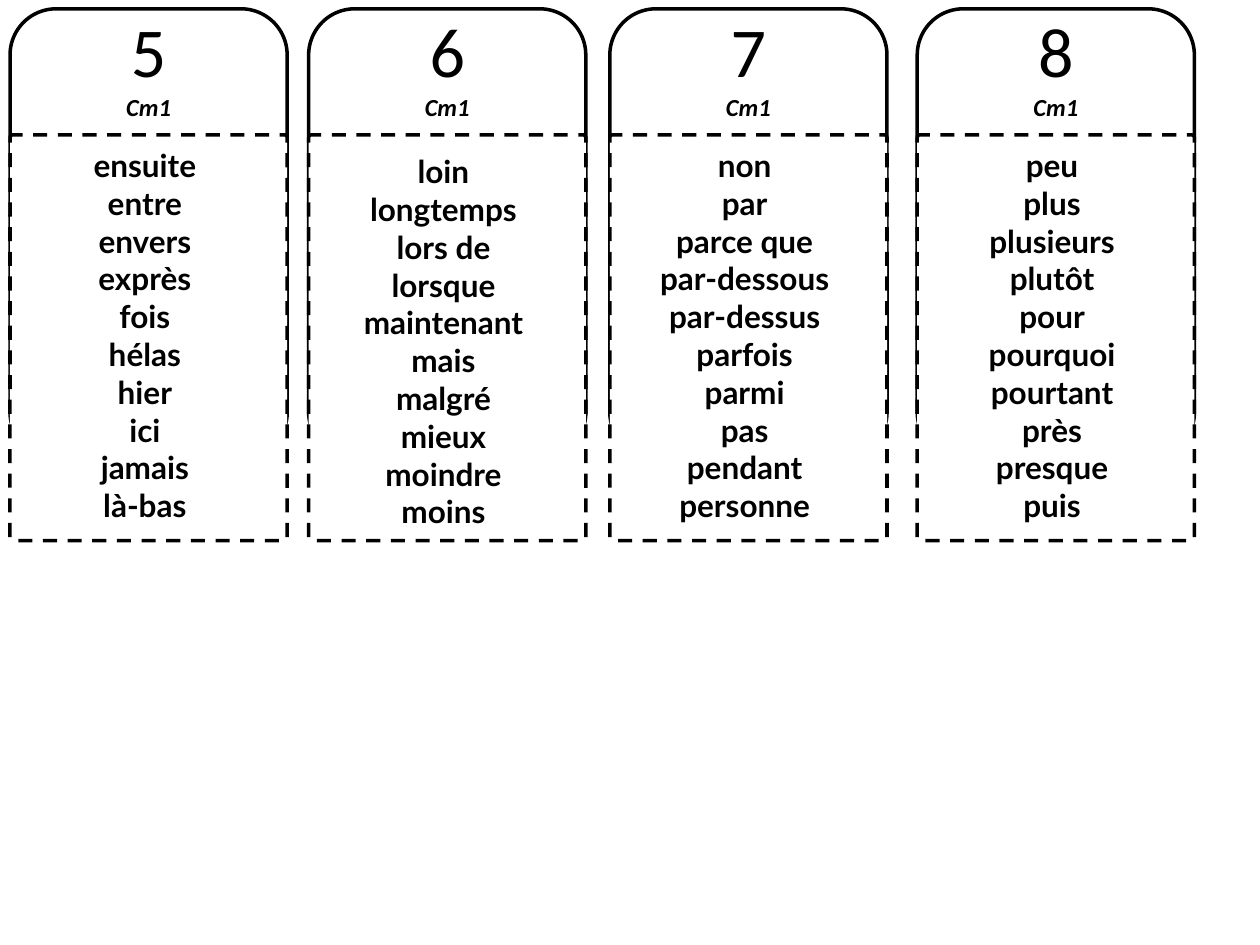
from pptx import Presentation
from pptx.dml.color import RGBColor
from pptx.enum.dml import MSO_LINE_DASH_STYLE as Dash
from pptx.enum.shapes import MSO_SHAPE as Shape
from pptx.enum.text import PP_ALIGN as Align
from pptx.util import Inches, Pt

BLACK = RGBColor(0, 0, 0)
WHITE = RGBColor(255, 255, 255)
WIDTH, HEIGHT = Inches(10), Inches(7.5)
COL, ROW = WIDTH / 10, HEIGHT / 7.5
CARD_TOP, CARD_WIDTH, CARD_HEIGHT = 0.07, 2.2, 4.22

NUMBER = {"size": Pt(40), "name": "Calibri"}
LEVEL = {"size": Pt(14), "name": "Calibri", "bold": True, "italic": True}
WORD = {"size": Pt(18), "name": "Lato", "bold": True}

CARDS = [
    ("5", 0.08, 1.56, 1.04, ["ensuite", "entre", "envers", "exprès", "fois",
                             "hélas", "hier", "ici", "jamais", "là-bas"]),
    ("6", 2.45, 1.63, 1.09, ["loin", "longtemps", "lors de", "lorsque", "maintenant",
                             "mais", "malgré", "mieux", "moindre", "moins"]),
    ("7", 4.84, 1.87, 1.04, ["non", "par", "parce que", "par-dessous", "par-dessus",
                             "parfois", "parmi", "pas", "pendant", "personne"]),
    ("8", 7.28, 1.57, 1.04, ["peu", "plus", "plusieurs", "plutôt", "pour",
                             "pourquoi", "pourtant", "près", "presque", "puis"]),
]


def grid(x, y, w, h):
    """Turn columns and rows of the slide grid into lengths."""
    return int(x * COL), int(y * ROW), int(w * COL), int(h * ROW)


def add_text(s, box, lines, inset=0.05):
    """Add a text box of centred paragraphs from pairs of text and font format."""
    tf = s.shapes.add_textbox(*grid(*box)).text_frame
    tf.word_wrap = True
    tf.margin_top = tf.margin_bottom = Inches(inset)
    for i, (text, fmt) in enumerate(lines):
        p = tf.paragraphs[0] if i == 0 else tf.add_paragraph()
        p.alignment = Align.CENTER
        r = p.add_run()
        r.text = text
        r.font.color.rgb = BLACK
        for name, value in fmt.items():
            setattr(r.font, name, value)


def add_frame(s, box):
    """Add a rounded rectangle with a black outline and no shadow."""
    sp = s.shapes.add_shape(Shape.ROUNDED_RECTANGLE, *grid(*box))
    sp.shadow.inherit = False
    sp.fill.background()
    sp.line.color.rgb = BLACK
    sp.line.width = Pt(2)
    return sp


def add_header(s, x, y, w, h, number):
    """Add the solid card back with its number and level at the top."""
    add_frame(s, (x, y, w, h))
    add_text(s, (x, y - 0.01, w, 0.92), [(number, NUMBER), ("Cm1", LEVEL)], inset=0)


def add_panel(s, x, y, w, h):
    """Add the dashed white panel that holds the words."""
    sp = add_frame(s, (x, y, w, h))
    sp.adjustments[0] = 0.01
    sp.fill.solid()
    sp.fill.fore_color.rgb = WHITE
    sp.line.dash_style = Dash.DASH


def add_card(s, x, y, w, h, number, words_width, words_top, words):
    """Add one word card within the given box."""
    add_header(s, x, y, w, h - 0.65, number)
    add_panel(s, x, y + 1, w, h - 1)
    words_left = x + (w - words_width) / 2 - 0.03
    add_text(s, (words_left, y + words_top, words_width, h - 1.09),
             [(word, WORD) for word in words])


def main():
    """Build the slide of word cards."""
    prs = Presentation()
    prs.slide_width, prs.slide_height = WIDTH, HEIGHT
    s = prs.slides.add_slide(prs.slide_layouts[6])
    for number, left, words_width, words_top, words in CARDS:
        add_card(s, left, CARD_TOP, CARD_WIDTH, CARD_HEIGHT,
                 number, words_width, words_top, words)
    prs.save("out.pptx")


if __name__ == "__main__":
    main()
